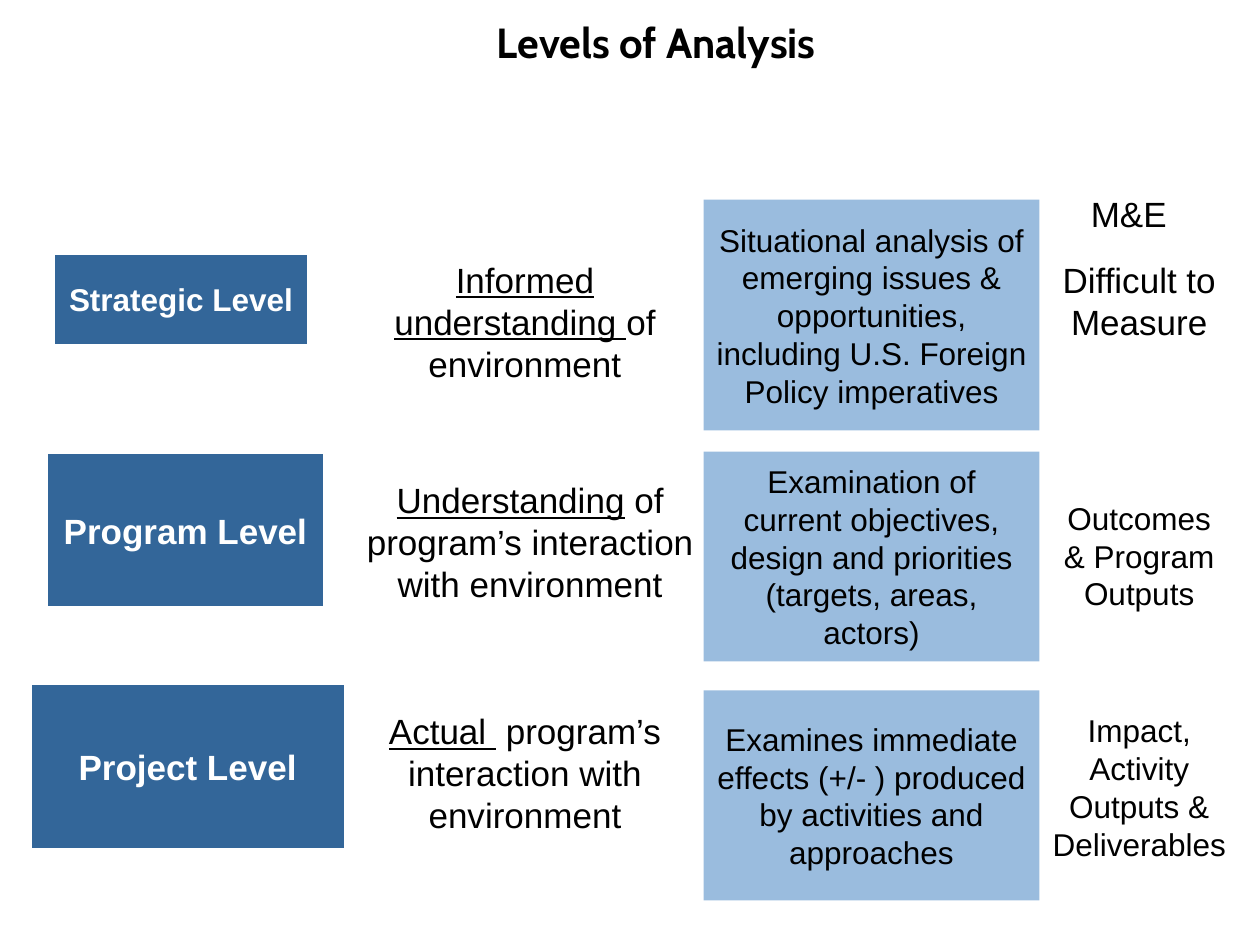
from dataclasses import dataclass

from pptx import Presentation
from pptx.dml.color import RGBColor
from pptx.enum.shapes import MSO_SHAPE
from pptx.enum.text import MSO_ANCHOR, MSO_AUTO_SIZE, PP_ALIGN
from pptx.util import Pt

RECTANGLE = MSO_SHAPE.RECTANGLE
TOP, MIDDLE = MSO_ANCHOR.TOP, MSO_ANCHOR.MIDDLE
CENTER = PP_ALIGN.CENTER
NO_AUTOFIT = MSO_AUTO_SIZE.NONE
TITLE_ONLY = 5


@dataclass(frozen=True)
class Theme:
    title_font: str = "Cabin"
    body_font: str = "Arial"
    title_size: int = 24
    large: int = 20
    small: int = 18
    text: RGBColor = RGBColor(0, 0, 0)
    light: RGBColor = RGBColor(255, 255, 255)
    level_fill: RGBColor = RGBColor(0x33, 0x66, 0x99)
    analysis_fill: RGBColor = RGBColor(0x9A, 0xBC, 0xDE)
    outline: int = 3


THEME = Theme()

LEVELS = [
    {
        "box": (0, 114, 720, 132),
        "level": ("Strategic Level", THEME.small, (30, 30, 147, 54)),
        "purpose": ("Informed understanding ", "of environment", (192, 30, 216, 80)),
        "analysis": ("Situational analysis of emerging issues & opportunities, "
                     "including U.S. Foreign Policy imperatives", (402, 0, 192, 132)),
        "measure": ("Difficult to Measure", THEME.large, (600, 30, 102, 55)),
    },
    {
        "box": (0, 258, 720, 120),
        "level": ("Program Level", THEME.large, (26, 0, 160, 90)),
        "purpose": ("Understanding", " of program’s interaction with environment",
                    (198, 12, 210, 80)),
        "analysis": ("Examination of current objectives, design and priorities "
                     "(targets, areas, actors)", (402, 0, 192, 120)),
        "measure": ("Outcomes & Program Outputs", THEME.small, (600, 23.5, 102, 73)),
    },
    {
        "box": (0, 390, 720, 124.5),
        "level": ("Project Level", THEME.large, (16.5, 0, 181.5, 96)),
        "purpose": ("Actual ", " program’s interaction with environment",
                    (198, 12, 204, 80)),
        "analysis": ("Examines immediate effects (+/- ) produced by activities "
                     "and approaches", (402, 4.5, 192, 120)),
        "measure": ("Impact, Activity Outputs & Deliverables", THEME.small,
                    (594, 13, 114, 94)),
    },
]


def place(box, part):
    left, top, width, height = part
    return Pt(box[0] + left), Pt(box[1] + top), Pt(width), Pt(height)


def format_text(shape, size, color=THEME.text, bold=False, font=THEME.body_font):
    paragraph = shape.text_frame.paragraphs[0]
    paragraph.alignment = CENTER
    for run in paragraph.runs:
        run.font.name = font
        run.font.size = Pt(size)
        run.font.bold = bold
        run.font.color.rgb = color


def add_label(slide, position, text, size):
    label = slide.shapes.add_textbox(*position)
    label.text_frame.word_wrap = True
    label.text_frame.text = text
    format_text(label, size)
    return label


def add_block(slide, position, text, fill):
    block = slide.shapes.add_shape(RECTANGLE, *position)
    block.shadow.inherit = False
    block.fill.solid()
    block.fill.fore_color.rgb = fill
    block.line.fill.background()
    block.text_frame.vertical_anchor = MIDDLE
    block.text_frame.word_wrap = True
    block.text_frame.text = text
    return block


def add_title(slide, box):
    title = slide.shapes.title
    title.left, title.top, title.width, title.height = map(Pt, box)
    title.text_frame.text = "Levels of Analysis"
    title.text_frame.auto_size = NO_AUTOFIT
    title.text_frame.vertical_anchor = TOP
    format_text(title, THEME.title_size, bold=True, font=THEME.title_font)


def add_level_row(slide, box, level, purpose, analysis, measure):
    text, part = analysis
    analysis_block = add_block(slide, place(box, part), text, THEME.analysis_fill)
    format_text(analysis_block, THEME.small)

    text, size, part = level
    level_block = add_block(slide, place(box, part), text, THEME.level_fill)
    level_block.line.color.rgb = THEME.light
    level_block.line.width = Pt(THEME.outline)
    level_block.text_frame.word_wrap = False
    format_text(level_block, size, THEME.light, bold=True)

    emphasis, remainder, part = purpose
    purpose_label = add_label(slide, place(box, part), emphasis, THEME.large)
    paragraph = purpose_label.text_frame.paragraphs[0]
    paragraph.runs[0].font.underline = True
    paragraph.add_run().text = remainder
    format_text(purpose_label, THEME.large)

    text, size, part = measure
    add_label(slide, place(box, part), text, size)


def main():
    presentation = Presentation()
    presentation.slide_width = Pt(720)
    presentation.slide_height = Pt(540)
    slide = presentation.slides.add_slide(presentation.slide_layouts[TITLE_ONLY])
    add_title(slide, (60, 6, 630, 36))
    add_label(slide, place((0, 0), (603, 106.5, 84, 32)), "M&E", THEME.large)
    for row in LEVELS:
        add_level_row(slide, **row)
    presentation.save("out.pptx")


if __name__ == "__main__":
    main()
